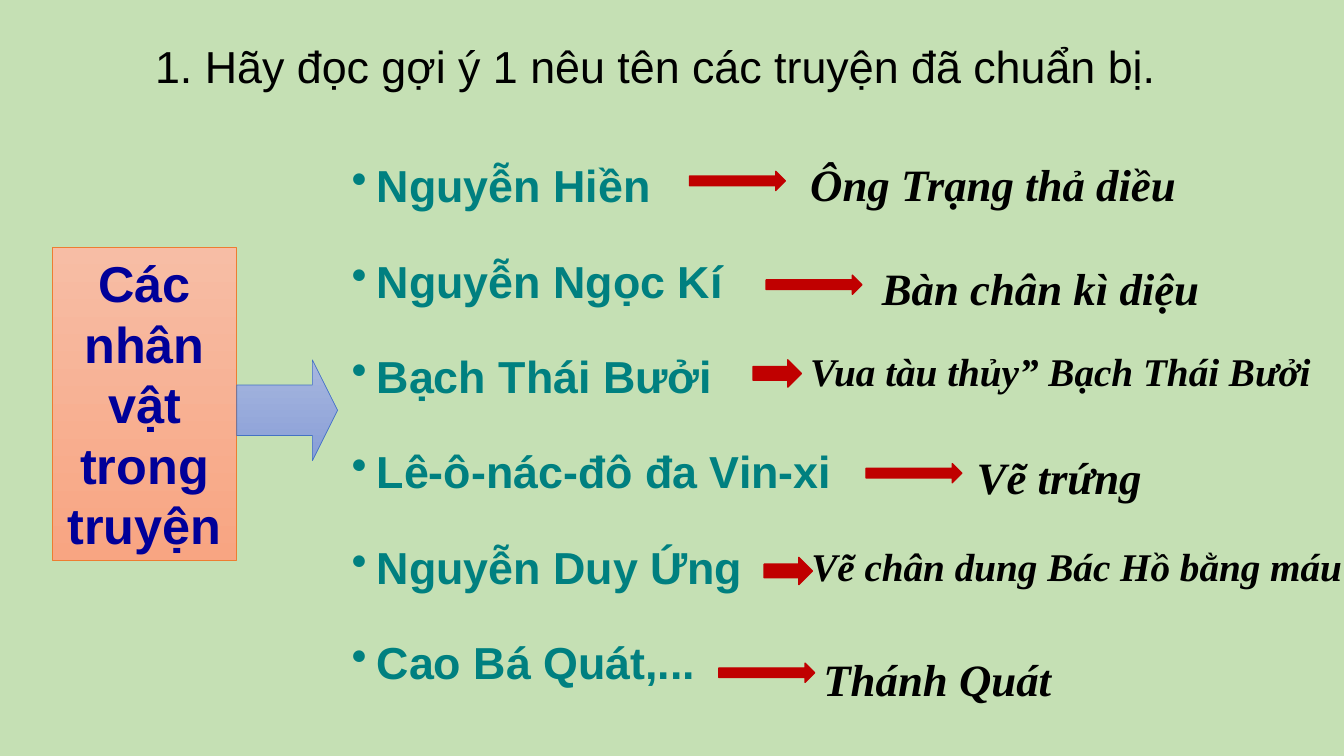
import pptx
import pptx.util
import pptx.dml.color
import pptx.enum.shapes
import pptx.enum.text
import lxml.etree

COLORS = {
    "background": "C5E0B4", "ink": "000000", "navy": "000099", "teal": "008080",
    "red": "C00000", "orange": "ED7D31", "peach": "F7BDA5", "salmon": "F8A582",
    "blue": "4472C4", "sky": "A8B7DF", "periwinkle": "889ED7",
}
SHAPES = pptx.enum.shapes.MSO_SHAPE
CENTER = pptx.enum.text.PP_ALIGN.CENTER
LONG_ARROW = (7.13, 2.53)
SHORT_ARROW = (3.6, 3.6)


def color(name):
    return pptx.dml.color.RGBColor.from_string(COLORS[name])


def write(para, text, size=32, font="Arial", ink="ink", bold=False, italic=False,
          spacing=None, before=0, align=None, bullet=None):
    if bullet:
        properties = para._p.get_or_add_pPr()
        indent = pptx.util.Inches(0.25)
        properties.set("marL", str(indent))
        properties.set("indent", str(-indent))
        mark = lxml.etree.SubElement(properties, pptx.oxml.ns.qn("a:buChar"))
        mark.set("char", bullet)
    para.space_before = pptx.util.Pt(before)
    if spacing:
        para.line_spacing = spacing
    if align is not None:
        para.alignment = align
    span = para.add_run()
    span.text = text
    span.font.name = font
    span.font.size = pptx.util.Pt(size)
    span.font.bold = bold
    span.font.italic = italic
    span.font.color.rgb = color(ink)


class Painter:
    """Draws elements on one page, with lengths in percent of the slide's size."""

    def __init__(self, deck):
        self.deck = deck
        self.page = deck.slides.add_slide(deck.slide_layouts[6])
        self.page.background.fill.solid()
        self.page.background.fill.fore_color.rgb = color("background")

    def place(self, left, top, width, height):
        across, down = self.deck.slide_width / 100, self.deck.slide_height / 100
        return [round(length) for length in
                (left * across, top * down, width * across, height * down)]

    def text(self, area, lines, wrap=True, gap=0, **style):
        box = self.page.shapes.add_textbox(*self.place(*area))
        self.fill_text(box.text_frame, lines, wrap, gap, **style)

    def fill_text(self, frame, lines, wrap=True, gap=0, **style):
        frame.word_wrap = wrap
        for number, line in enumerate(lines):
            para = frame.add_paragraph() if number else frame.paragraphs[0]
            write(para, line, before=gap if number else 0, **style)

    def shape(self, kind, area, fills, line, weight):
        shape = self.page.shapes.add_shape(kind, *self.place(*area))
        shape.shadow.inherit = False
        if len(fills) == 1:
            shape.fill.solid()
            shape.fill.fore_color.rgb = color(fills[0])
        else:
            shape.fill.gradient()
            shape.fill.gradient_angle = 270
            for stop, position, name in zip(shape.fill.gradient_stops, (0, 1), fills):
                stop.position = position
                stop.color.rgb = color(name)
        shape.line.color.rgb = color(line)
        shape.line.width = pptx.util.Pt(weight)
        return shape

    def arrow(self, corner, size):
        self.shape(SHAPES.RIGHT_ARROW, corner + size, ["red"], "red", 1)


def main():
    deck = pptx.Presentation()
    deck.slide_width = pptx.util.Inches(13.333)
    deck.slide_height = pptx.util.Inches(7.5)
    painter = Painter(deck)

    painter.text((10.8, 4.4, 78.45, 8.53),
                 ["1. Hãy đọc gợi ý 1 nêu tên các truyện đã chuẩn bị."])

    topic = painter.shape(SHAPES.RECTANGLE, (3.9, 32.67, 13.72, 41.47),
                          ["peach", "salmon"], "orange", 0.5)
    painter.fill_text(topic.text_frame, ["Các nhân vật trong truyện"],
                      size=36, ink="navy", bold=True, align=CENTER)

    names = ["Nguyễn Hiền", "Nguyễn Ngọc Kí", "Bạch Thái Bưởi",
             "Lê-ô-nác-đô đa Vin-xi", "Nguyễn Duy Ứng", "Cao Bá Quát,..."]
    painter.text((25.42, 18.13, 67.42, 75.33), names, gap=18.2, spacing=1.3,
                 ink="teal", bold=True, bullet="•")

    pointer = painter.shape(SHAPES.RIGHT_ARROW, (17.62, 47.6, 7.5, 13.33),
                            ["sky", "periwinkle"], "blue", 0.5)
    pointer.adjustments[1] = 0.25

    stories = [
        ("Ông Trạng thả diều", (59.55, 16.53, 30.75, 12.13), 32, 1.5,
         (51.3, 22.67), LONG_ARROW),
        ("Bàn chân kì diệu", (64.88, 30.27, 29.7, 12.13), 32, 1.5,
         (57, 36.4), LONG_ARROW),
        ("Vua tàu thủy” Bạch Thái Bưởi", (59.55, 45.33, 40.43, 7.6), 28, None,
         (56.03, 47.6), SHORT_ARROW),
        ("Vẽ trứng", (71.93, 55.33, 15.67, 10.8), 32, 1.5,
         (64.43, 61.33), LONG_ARROW),
        ("Vẽ chân dung Bác Hồ bằng máu", (59.63, 71.07, 43.43, 7.6), 28, None,
         (56.85, 73.73), SHORT_ARROW),
        ("Thánh Quát", (60.53, 82, 20.77, 12.13), 32, 1.5,
         (53.48, 87.73), LONG_ARROW),
    ]
    for title, area, size, spacing, corner, arrow_size in stories:
        painter.arrow(corner, arrow_size)
        painter.text(area, [title], size=size, spacing=spacing,
                     font="Times New Roman", bold=True, italic=True)

    deck.save("out.pptx")


if __name__ == "__main__":
    main()
